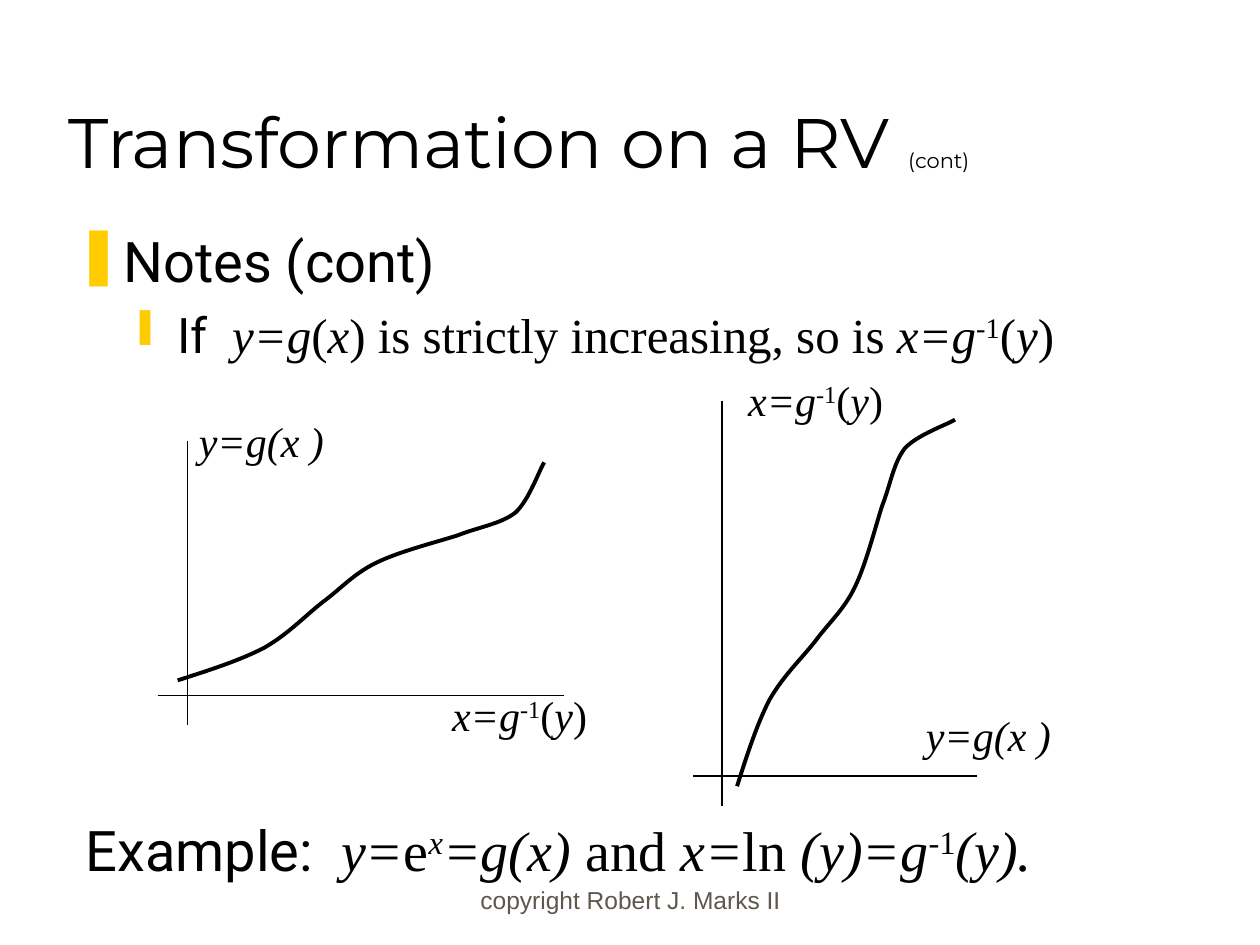
from lxml.etree import SubElement
from pptx import Presentation
from pptx.dml.color import RGBColor
from pptx.enum.shapes import MSO_CONNECTOR
from pptx.enum.text import MSO_ANCHOR, MSO_AUTO_SIZE, PP_ALIGN
from pptx.oxml.ns import qn
from pptx.util import Inches, Pt

COLORS = {"ink": "000000", "bullet": "FFCC00", "footer": "5E574E"}
SERIF, SANS, HEAD = "Times New Roman", "Roboto", "Montserrat"

# Runs are (text, style): i italic, ^ superscript, s sans, n plain serif
INVERSE = [("x=g", "i"), ("-1", "^"), ("(", "n"), ("y", "i"), (")", "n")]
FUNCTION = [("y=g(x )", "i")]
NOTES = [("Notes (cont)", "s")]
CLAIM = [("If ", "s"), (" y=g", "i"), ("(", "n"), ("x", "i"),
         (") is strictly increasing, so is ", "n")] + INVERSE
EXAMPLE = [("Example: ", "s"), (" y=", "i"), ("e", "n"), ("x", "i^"),
           ("=g(x) ", "i"), ("and ", "n"), ("x=", "i"), ("ln ", "n"),
           ("(y)=g", "i"), ("-1", "^"), ("(y).", "i")]

# Start point, then three points for each Bezier segment
CURVE = [(1.41, 5.4),
         (1.66, 5.32), (1.91, 5.24), (2.1, 5.14),
         (2.29, 5.03), (2.42, 4.89), (2.56, 4.78),
         (2.71, 4.67), (2.8, 4.56), (2.98, 4.47),
         (3.16, 4.38), (3.44, 4.31), (3.63, 4.25),
         (3.81, 4.18), (3.97, 4.16), (4.09, 4.07),
         (4.2, 3.97), (4.28, 3.73), (4.32, 3.67)]
INVERSE_START = (5.85, 6.24)

AXES = [(1.49, 3.5, 1.49, 5.75), (1.25, 5.52, 4.48, 5.52),
        (5.5, 6.16, 7.75, 6.16), (5.73, 3.18, 5.73, 6.4)]
LABELS = [(INVERSE, (3.49, 5.42, 1.43, 0.5)),
          (FUNCTION, (1.48, 3.25, 1.44, 1.1)),
          (FUNCTION, (7.25, 5.58, 1.44, 1.1)),
          (INVERSE, (5.84, 2.92, 2.5, 0.5))]


def rgb(name):
    return RGBColor.from_string(COLORS[name])


def add_text(p, text, size=24, font=SERIF, color="ink", italic=False, sup=False):
    r = p.add_run()
    r.text = text
    r.font.size, r.font.name, r.font.italic = Pt(size), font, italic
    r.font.color.rgb = rgb(color)
    if sup:
        r.font._element.set("baseline", "30000")


def add_runs(p, runs, size):
    for text, style in runs:
        add_text(p, text, size=size, font=SANS if "s" in style else SERIF,
                 italic="i" in style, sup="^" in style)


def add_box(slide, box, anchor=MSO_ANCHOR.TOP):
    tf = slide.shapes.add_textbox(*map(Inches, box)).text_frame
    tf.word_wrap = True
    tf.vertical_anchor = anchor
    return tf


def set_bullet(p, char, margin, indent):
    pPr = p._p.get_or_add_pPr()
    pPr.set("marL", str(Inches(margin)))
    pPr.set("indent", str(Inches(-indent)))
    color = SubElement(pPr, qn("a:buClr"))
    SubElement(color, qn("a:srgbClr"), val=COLORS["bullet"])
    SubElement(pPr, qn("a:buChar"), char=char)


def add_curve(slide, points):
    start, *rest = [(Inches(x), Inches(y)) for x, y in points]
    fb = slide.shapes.build_freeform(*start)
    fb.add_line_segments(rest, close=False)
    sp = fb.convert_to_shape()
    sp.shadow.inherit = False
    sp.fill.background()
    sp.line.color.rgb, sp.line.width = rgb("ink"), Pt(2.25)
    # Turn each three line points into one Bezier segment
    path = next(sp._element.iter(qn("a:path")))
    lines = path.findall(qn("a:lnTo"))
    for i in range(0, len(lines), 3):
        bezier = SubElement(path, qn("a:cubicBezTo"))
        for line in lines[i:i + 3]:
            bezier.append(line[0])
            path.remove(line)


def main():
    prs = Presentation()
    prs.slide_width, prs.slide_height = Inches(10), Inches(7.5)
    slide = prs.slides.add_slide(prs.slide_layouts[5])

    # Title
    title = slide.shapes.title
    title.left, title.top, title.width, title.height = map(Inches, (0.44, 0.25, 8.5, 1.25))
    tf = title.text_frame
    tf.vertical_anchor, tf.auto_size = MSO_ANCHOR.BOTTOM, MSO_AUTO_SIZE.NONE
    p = tf.paragraphs[0]
    p.alignment = PP_ALIGN.LEFT
    add_text(p, "Transformation on a RV ", size=40, font=HEAD)
    add_text(p, "(cont)", size=12, font=HEAD)

    # Bulleted notes
    tf = add_box(slide, (0.5, 1.75, 8.94, 1.42))
    p = tf.paragraphs[0]
    set_bullet(p, "❚", 0.38, 0.38)
    add_runs(p, NOTES, 32)
    p = tf.add_paragraph()
    p.level = 1
    p.space_before = Pt(6)
    set_bullet(p, "❙", 0.81, 0.31)
    add_runs(p, CLAIM, 28)

    # Axes of both graphs
    for axis in AXES:
        line = slide.shapes.add_connector(MSO_CONNECTOR.STRAIGHT, *map(Inches, axis))
        line.line.color.rgb, line.line.width = rgb("ink"), Pt(0.75)
        SubElement(line._element.spPr, qn("a:effectLst"))

    # The function, and its inverse with the two axes swapped
    x0, y0 = CURVE[0]
    u0, v0 = INVERSE_START
    add_curve(slide, CURVE)
    add_curve(slide, [(u0 + y0 - y, v0 + x0 - x) for x, y in CURVE])

    # Graph labels, example and footer
    for runs, box in LABELS:
        add_runs(add_box(slide, box).paragraphs[0], runs, 24)
    add_runs(add_box(slide, (0.58, 6.42, 8.5, 0.63)).paragraphs[0], EXAMPLE, 32)
    p = add_box(slide, (3.42, 6.81, 3.17, 0.5), MSO_ANCHOR.BOTTOM).paragraphs[0]
    p.alignment = PP_ALIGN.CENTER
    add_text(p, "copyright Robert J. Marks II", size=14, font="Arial", color="footer")

    prs.save("out.pptx")


if __name__ == "__main__":
    main()
